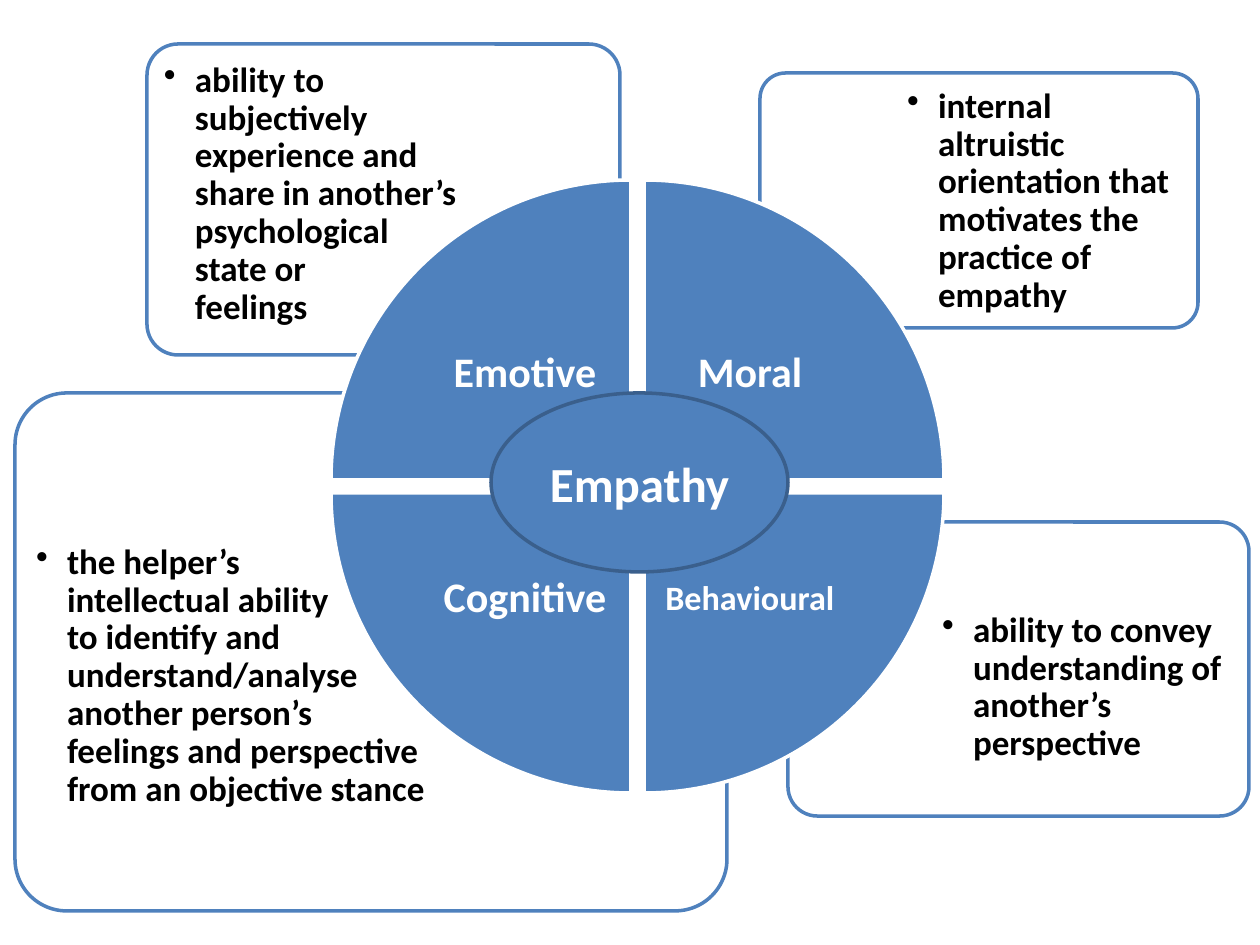
from dataclasses import dataclass

from lxml import etree
from pptx import Presentation
from pptx.dml.color import RGBColor
from pptx.enum.shapes import MSO_SHAPE
from pptx.enum.text import MSO_ANCHOR, PP_ALIGN
from pptx.oxml.ns import qn
from pptx.util import Emu, Pt

ROUNDED = MSO_SHAPE.ROUNDED_RECTANGLE
WEDGE = MSO_SHAPE.PIE_WEDGE
OVAL = MSO_SHAPE.OVAL
TOP, MIDDLE = MSO_ANCHOR.TOP, MSO_ANCHOR.MIDDLE
LEFT, CENTER = PP_ALIGN.LEFT, PP_ALIGN.CENTER
PX_PER_INCH = 126


@dataclass(frozen=True)
class Theme:
    font: str = "Calibri"
    blue: RGBColor = RGBColor(0x4F, 0x81, 0xBD)
    dark_blue: RGBColor = RGBColor(0x3A, 0x5F, 0x8C)
    white: RGBColor = RGBColor(0xFF, 0xFF, 0xFF)
    black: RGBColor = RGBColor(0, 0, 0)
    definition_size: float = 20
    label_size: float = 24
    long_label_size: float = 19.5
    hub_size: float = 28
    line_width: float = 2


THEME = Theme()

DEFINITIONS = [
    ((788, 522, 461, 294), (144, 80, 310, 207),
     "ability to convey understanding of another’s perspective"),
    ((15, 393, 712, 518), (11, 141, 475, 365),
     "the helper’s\vintellectual ability\vto identify and understand/analyse\v"
     "another person’s\vfeelings and perspective from an objective stance"),
    ((760, 73, 438, 255), (137, 5, 296, 180),
     "internal altruistic orientation that motivates the practice of empathy"),
    ((147, 44, 473, 311), (7, 8, 318, 219),
     "ability to subjectively experience and share in another’s "
     "psychological\vstate or\vfeelings"),
]

COMPONENTS = [
    ("Emotive", 0, 0, 0, THEME.label_size),
    ("Moral", 1, 0, 90, THEME.label_size),
    ("Behavioural", 1, 1, 180, THEME.long_label_size),
    ("Cognitive", 0, 1, 270, THEME.label_size),
]


def px(length):
    return Emu(round(length * 914400 / PX_PER_INCH))


def add_outlined(slide, kind, box, fill, line):
    shape = slide.shapes.add_shape(kind, *map(px, box))
    shape.shadow.inherit = False
    shape.fill.solid()
    shape.fill.fore_color.rgb = fill
    shape.line.color.rgb = line
    shape.line.width = Pt(THEME.line_width)
    return shape


def format_paragraph(paragraph, size, color, align, spacing):
    paragraph.alignment = align
    paragraph.line_spacing = spacing
    font = paragraph.font
    font.name = THEME.font
    font.size = Pt(size)
    font.bold = True
    font.color.rgb = color


def add_text(slide, box, text, inset, anchor):
    frame = slide.shapes.add_textbox(*map(px, box)).text_frame
    frame.word_wrap = True
    frame.vertical_anchor = anchor
    frame.margin_left = frame.margin_right = px(inset)
    frame.margin_top = frame.margin_bottom = px(inset)
    paragraph = frame.paragraphs[0]
    paragraph.text = text
    return paragraph


def add_bullet(paragraph, indent):
    properties = paragraph._p.get_or_add_pPr()
    properties.set("marL", str(px(indent)))
    properties.set("indent", str(-px(indent)))
    etree.SubElement(properties, qn("a:buChar")).set("char", "•")


def add_definition(slide, box, text_box, text):
    panel = add_outlined(slide, ROUNDED, box, THEME.white, THEME.blue)
    panel.adjustments[0] = 0.1
    color = panel.fill._xPr.find(".//" + qn("a:srgbClr"))
    etree.SubElement(color, qn("a:alpha")).set("val", "90000")

    left, top, width, height = text_box
    definition = add_text(
        slide, (box[0] + left, box[1] + top, width, height), text, 10, TOP)
    add_bullet(definition, 31)
    format_paragraph(definition, THEME.definition_size, THEME.black, LEFT, 0.9)


def add_wheel(slide, box, gap):
    left, top, width, _ = box
    radius = (width - gap) // 2
    label_side = 212
    for name, column, row, rotation, size in COMPONENTS:
        x = left + column * (radius + gap)
        y = top + row * (radius + gap)
        wedge = add_outlined(
            slide, WEDGE, (x, y, radius, radius), THEME.blue, THEME.white)
        wedge.rotation = rotation
        label_box = (x + (1 - column) * (radius - label_side),
                     y + (1 - row) * (radius - label_side),
                     label_side, label_side)
        label = add_text(slide, label_box, name, 20, MIDDLE)
        format_paragraph(label, size, THEME.white, CENTER, 0.9)


def add_hub(slide, box):
    hub = add_outlined(slide, OVAL, box, THEME.blue, THEME.dark_blue)
    hub.text_frame.vertical_anchor = MIDDLE
    title = hub.text_frame.paragraphs[0]
    title.text = "Empathy"
    format_paragraph(title, THEME.hub_size, THEME.white, CENTER, 1.0)


def main():
    presentation = Presentation()
    presentation.slide_width = px(1260)
    presentation.slide_height = px(945)
    slide = presentation.slides.add_slide(presentation.slide_layouts[6])
    for box, text_box, text in DEFINITIONS:
        add_definition(slide, box, text_box, text)
    add_wheel(slide, (331, 180, 613, 613), 13)
    add_hub(slide, (491, 393, 297, 179))
    presentation.save("out.pptx")


if __name__ == "__main__":
    main()
